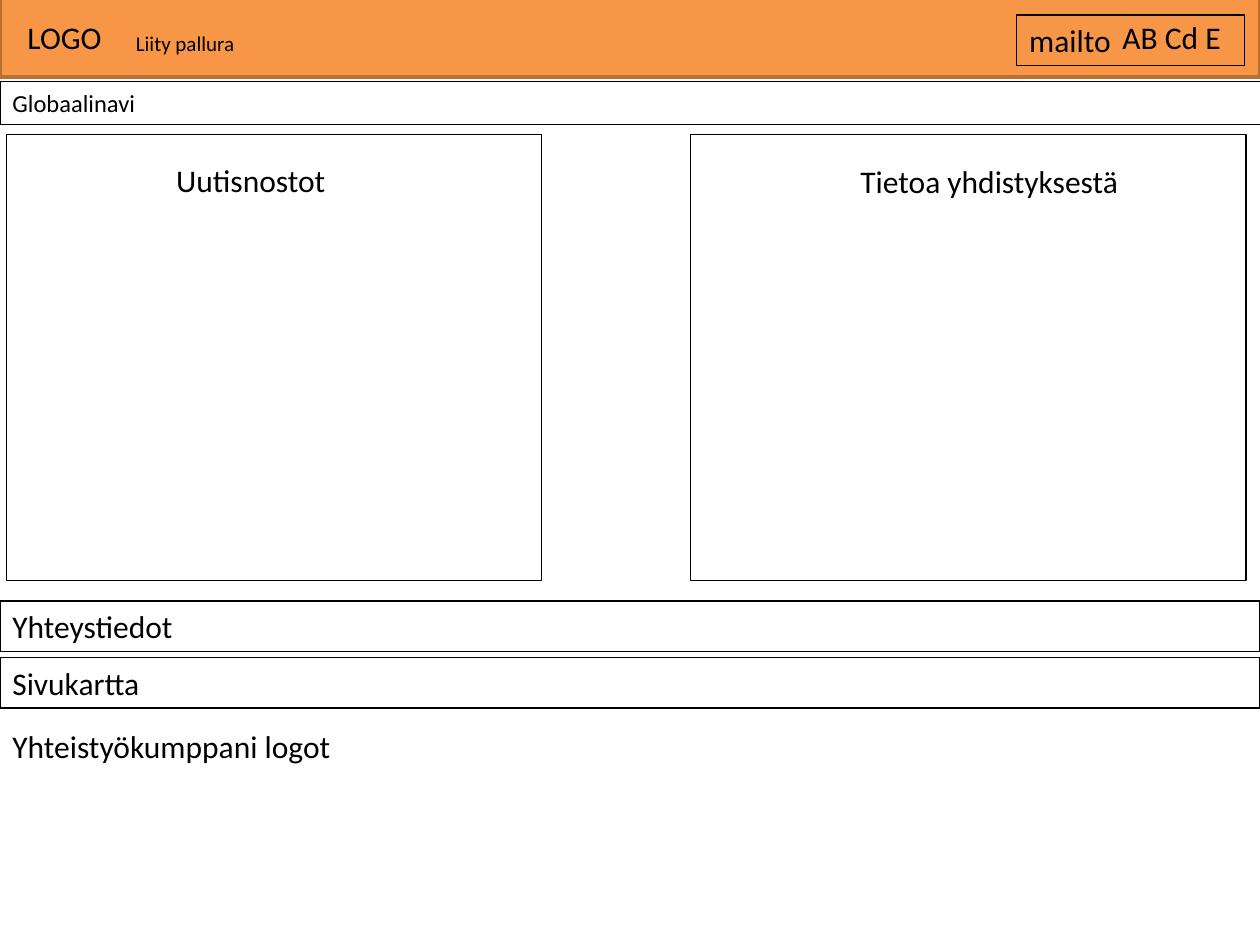
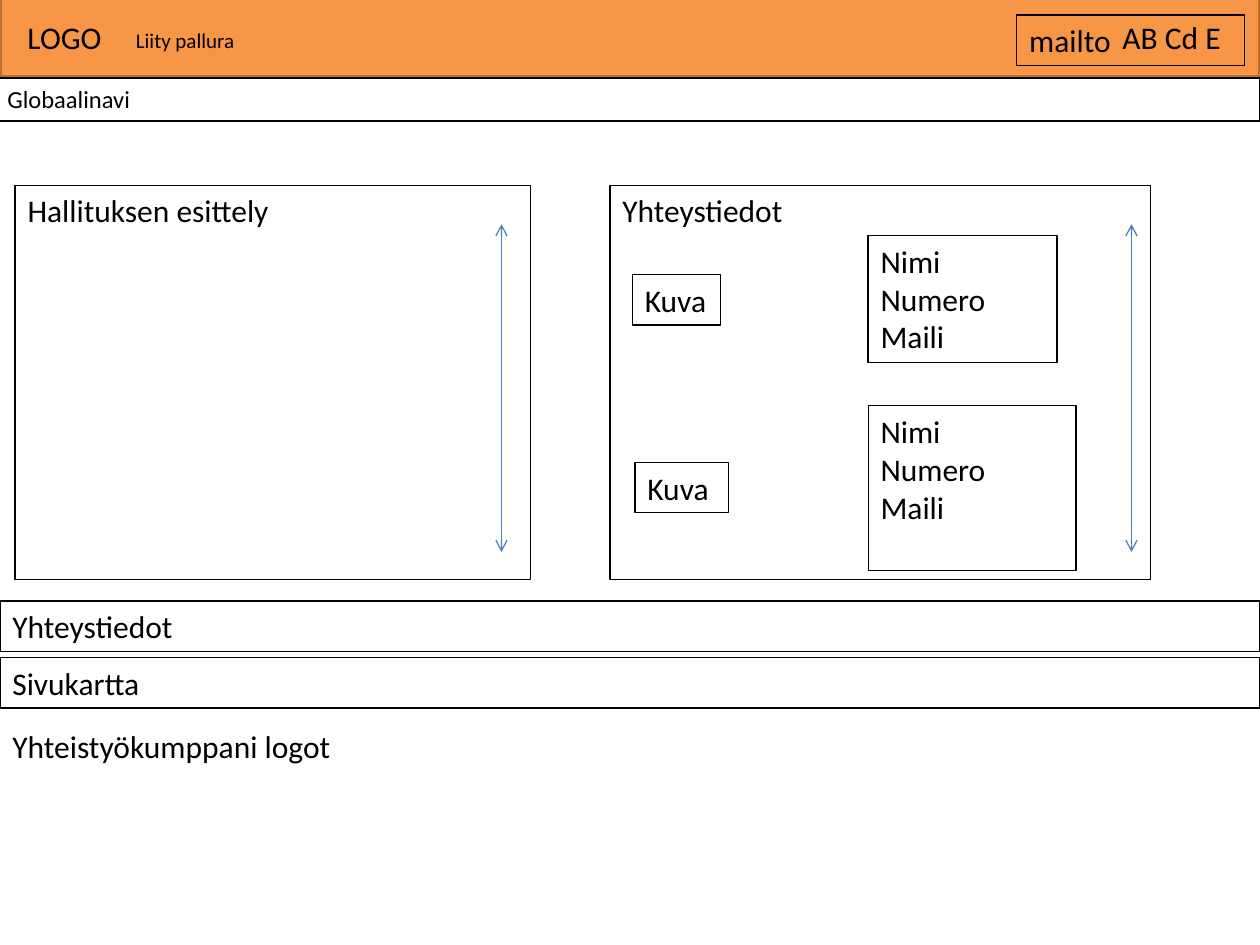
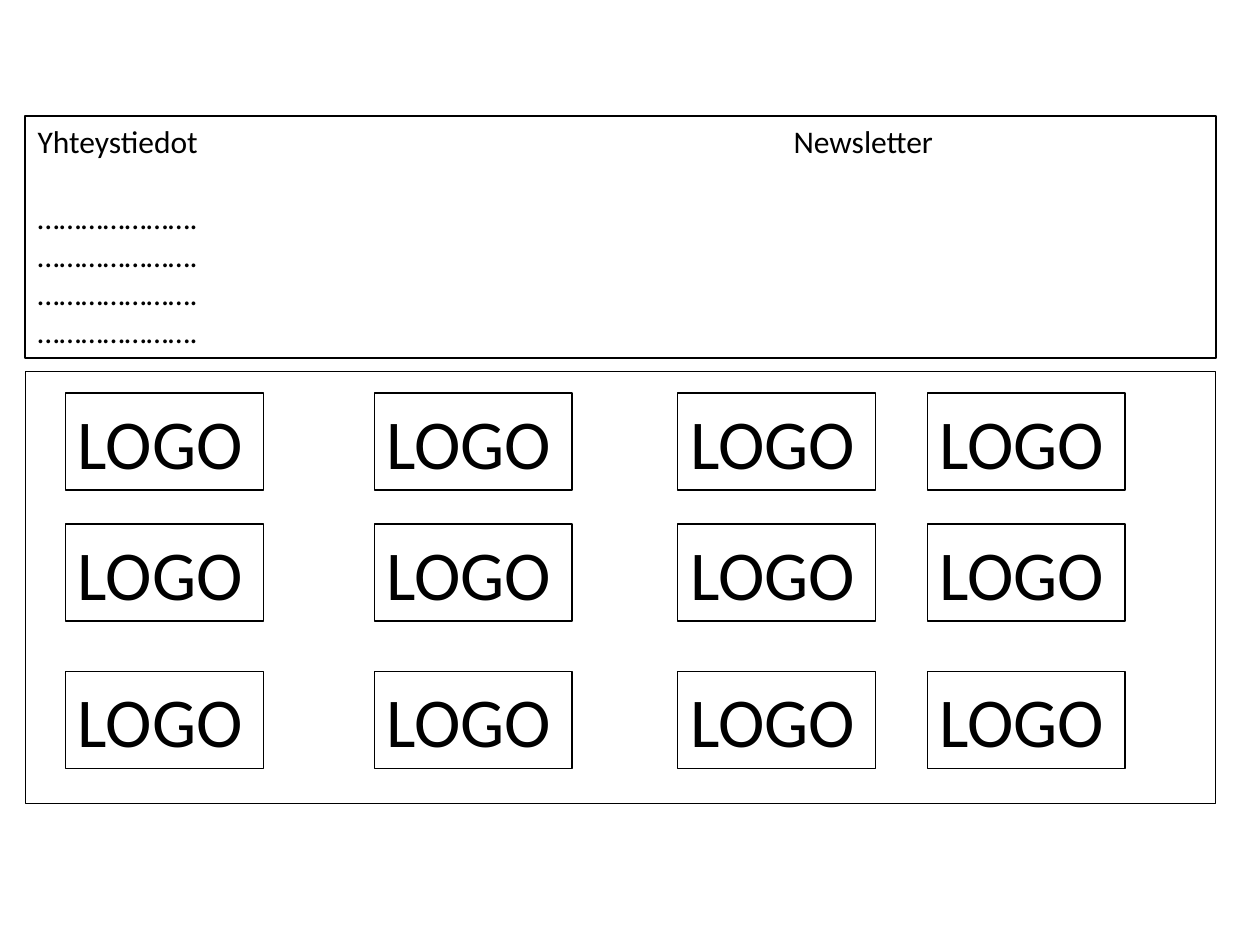
from dataclasses import dataclass
from itertools import product

from lxml.etree import SubElement
from pptx import Presentation
from pptx.dml.color import RGBColor
from pptx.enum.shapes import MSO_CONNECTOR, MSO_SHAPE
from pptx.enum.text import MSO_ANCHOR, PP_ALIGN
from pptx.oxml.ns import qn
from pptx.util import Inches, Pt

# Shared look
BLACK = RGBColor(0x00, 0x00, 0x00)
ORANGE = RGBColor(0xF7, 0x96, 0x46)
DARK_ORANGE = RGBColor(0xB7, 0x6F, 0x34)
BLUE = RGBColor(0x4B, 0x7E, 0xBC)
FONT = "Calibri"
BODY_SIZE = 18
FRAME_FORMAT = {"word_wrap": True, "vertical_anchor": MSO_ANCHOR.TOP}


@dataclass
class Box:
    """A region of the slide, in inches."""
    left: float
    top: float
    width: float
    height: float

    def inner(self, left, top, width, height):
        return Box(self.left + left, self.top + top, width, height)

    def lengths(self):
        return [Inches(value) for value in (self.left, self.top, self.width, self.height)]


PAGE = Box(0, 0, 10, 7.5)
HEADER = Box(0, -0.02, 10, 0.63)
FOOTER = Box(0, 4.77, 10, 1.35)


def set_attributes(target, values):
    for name, value in values.items():
        setattr(target, name, value)


def write_text(shape, text, size):
    text_frame = shape.text_frame
    set_attributes(text_frame, FRAME_FORMAT)
    text_frame.text = text
    for paragraph in text_frame.paragraphs:
        paragraph.alignment = PP_ALIGN.LEFT
        for run in paragraph.runs:
            set_attributes(run.font, {"name": FONT, "size": Pt(size)})
            run.font.color.rgb = BLACK


def add_label(slide, box, text, size=BODY_SIZE):
    write_text(slide.shapes.add_textbox(*box.lengths()), text, size)


def add_frame(slide, box, text="", size=BODY_SIZE, line=BLACK, line_width=0.75, fill=None):
    shape = slide.shapes.add_shape(MSO_SHAPE.RECTANGLE, *box.lengths())
    shape.shadow.inherit = False
    shape.line.color.rgb = line
    shape.line.width = Pt(line_width)
    if fill is None:
        shape.fill.background()
    else:
        shape.fill.solid()
        shape.fill.fore_color.rgb = fill
    if text:
        write_text(shape, text, size)
    return shape


def add_scroll_arrow(slide, box):
    """Vertical arrow along the left edge of the box, with a head at both ends."""
    left, top, _, height = box.lengths()
    connector = slide.shapes.add_connector(
        MSO_CONNECTOR.STRAIGHT, left, top, left, top + height)
    connector.line.color.rgb = BLUE
    connector.line.width = Pt(0.75)
    line = connector.line._get_or_add_ln()
    for end in ("a:headEnd", "a:tailEnd"):
        SubElement(line, qn(end), type="arrow")
    SubElement(connector._element.spPr, qn("a:effectLst"))


# Regions shared by the web pages
def add_header(slide, box, join_top):
    add_frame(slide, box, line=DARK_ORANGE, line_width=2, fill=ORANGE)
    add_label(slide, box.inner(8.81, 0.11, 0.98, 0.4), "AB Cd E")
    add_label(slide, box.inner(0.12, 0.11, 0.87, 0.4), "LOGO")
    add_label(slide, box.inner(0.98, join_top, 1.18, 0.3), "Liity pallura", 12)
    add_frame(slide, box.inner(8.07, 0.14, 1.81, 0.4), "mailto")


def add_footer(slide, box):
    add_frame(slide, box.inner(0, 0, box.width, 0.4), "Yhteystiedot")
    add_frame(slide, box.inner(0, 0.45, box.width, 0.4), "Sivukartta")
    add_label(slide, box.inner(0, 0.95, box.width, 0.4), "Yhteistyökumppani logot")


def add_web_page(slide, navigation, join_top):
    add_header(slide, HEADER, join_top)
    add_frame(slide, navigation, "Globaalinavi", 14)
    add_footer(slide, FOOTER)


# Panels of the single pages
def add_headed_panel(slide, box, heading, heading_left, heading_top):
    add_frame(slide, box)
    add_label(slide, box.inner(heading_left, heading_top, 2.68, 0.4), heading)


def add_scroll_panel(slide, box, heading, arrow_left):
    add_frame(slide, box, heading)
    add_scroll_arrow(slide, box.inner(arrow_left, 0.31, 0, 2.6))


def add_contact(slide, box, photo, details):
    add_frame(slide, box.inner(*photo), "Kuva")
    add_frame(slide, box.inner(*details), "Nimi\nNumero\nMaili")


def add_contact_form(slide, box):
    lines = ["Yhteystiedot\tNewsletter"] + ["…………………."] * 4
    shape = add_frame(slide, box, "\n".join(lines), line_width=1)
    heading, first_field = shape.text_frame.paragraphs[:2]
    first_field.space_before = Pt(22)
    tab_stops = SubElement(heading._p.get_or_add_pPr(), qn("a:tabLst"))
    SubElement(tab_stops, qn("a:tab"), pos=str(Inches(6)), algn="l")


def add_logo_wall(slide, box):
    add_frame(slide, box)
    for top, left in product((0.17, 1.21, 2.38), (0.32, 2.77, 5.18, 7.16)):
        add_frame(slide, box.inner(left, top, 1.57, 0.77), "LOGO", 40)


# Slides
def build_front_page(slide):
    add_web_page(slide, PAGE.inner(0, 0.65, 10.01, 0.34), 0.21)
    add_headed_panel(slide, PAGE.inner(0.05, 1.07, 4.25, 3.54), "Uutisnostot", 1.25, 0.16)
    add_headed_panel(slide, PAGE.inner(5.48, 1.07, 4.41, 3.54),
                     "Tietoa yhdistyksestä", 1.25, 0.17)


def build_board_page(slide):
    add_web_page(slide, PAGE.inner(-0.04, 0.62, 10.04, 0.34), 0.19)
    add_scroll_panel(slide, PAGE.inner(0.12, 1.47, 4.09, 3.13), "Hallituksen esittely", 3.86)
    contacts = PAGE.inner(4.84, 1.47, 4.29, 3.13)
    add_scroll_panel(slide, contacts, "Yhteystiedot", 4.14)
    add_contact(slide, contacts, (0.18, 0.71, 0.7, 0.4), (2.05, 0.4, 1.5, 1.01))
    add_contact(slide, contacts, (0.2, 2.2, 0.74, 0.4), (2.05, 1.75, 1.65, 1.31))


def build_footer_detail(slide):
    add_contact_form(slide, PAGE.inner(0.2, 0.92, 9.45, 1.92))
    add_logo_wall(slide, PAGE.inner(0.2, 2.95, 9.45, 3.43))


def main():
    presentation = Presentation()
    presentation.slide_width = Inches(PAGE.width)
    presentation.slide_height = Inches(PAGE.height)
    blank_layout = presentation.slide_layouts[6]
    for build in (build_front_page, build_board_page, build_footer_detail):
        build(presentation.slides.add_slide(blank_layout))
    presentation.save("out.pptx")


if __name__ == "__main__":
    main()
